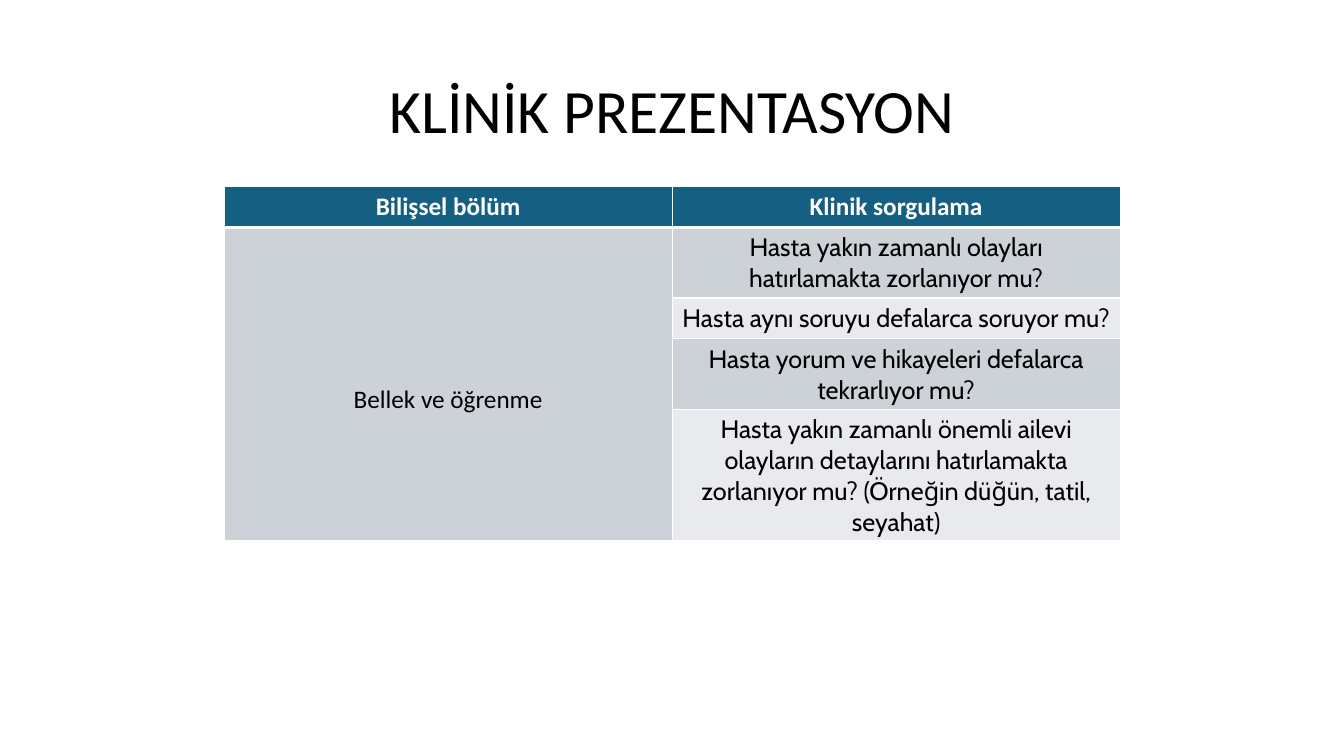
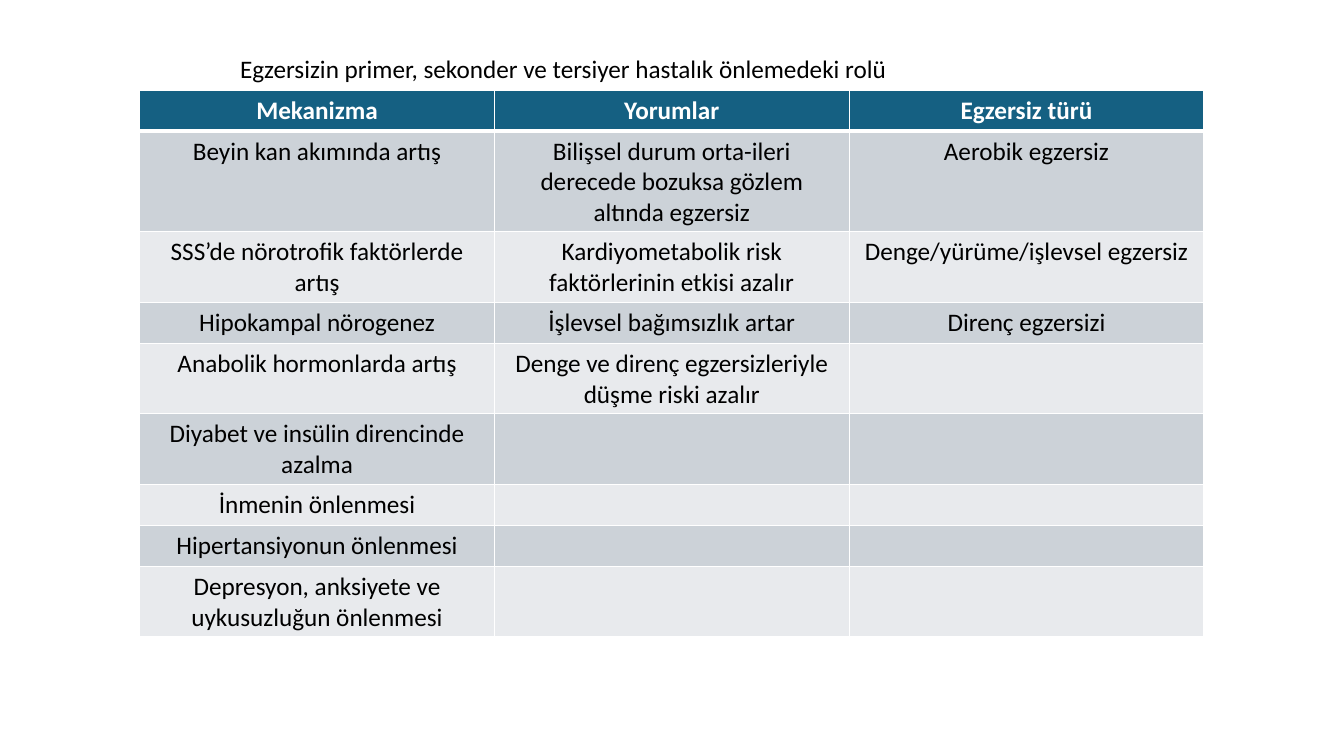
from lxml import etree
from pptx import Presentation
from pptx.dml.color import RGBColor
from pptx.enum.text import MSO_ANCHOR, PP_ALIGN
from pptx.oxml.ns import qn
from pptx.util import Cm, Pt

CENTER, LEFT = PP_ALIGN.CENTER, PP_ALIGN.LEFT
TOP, MIDDLE = MSO_ANCHOR.TOP, MSO_ANCHOR.MIDDLE

COLORS = {
    "text": "000000",
    "header": "156082",
    "header_text": "FFFFFF",
    "border": "FFFFFF",
    "band_dark": "CCD2D8",
    "band_light": "E8EAED",
}
FONT, ACCENT_FONT = "Calibri", "Cabin"
ROW_HEIGHT = 1.03
THIN, THICK = 1, 3


class Slides:
    """Shared style plus the page being filled."""

    def __init__(self):
        self.deck = Presentation()
        self.deck.slide_width, self.deck.slide_height = Cm(33.87), Cm(19.05)
        self.page = None

    def new_page(self):
        self.page = self.deck.slides.add_slide(self.deck.slide_layouts[6])

    def fill_text(self, frame, words, align=LEFT, color="text", **formats):
        para = frame.paragraphs[0]
        para.alignment = align
        span = para.add_run()
        span.text = words
        for name, value in {"name": FONT, "size": Pt(18), "bold": False, **formats}.items():
            setattr(span.font, name, value)
        span.font.color.rgb = RGBColor.from_string(COLORS[color])
        return para

    def text(self, words, left, top, width, height, anchor=TOP, **formats):
        box = self.page.shapes.add_textbox(Cm(left), Cm(top), Cm(width), Cm(height))
        frame = box.text_frame
        frame.word_wrap = True
        frame.vertical_anchor = anchor
        return self.fill_text(frame, words, **formats)

    def title(self, words):
        para = self.text(words, 2.34, 1.02, 29.21, 3.68, MIDDLE, align=CENTER, size=Pt(44))
        para.line_spacing = 0.9

    def borders(self, cell, top, bottom):
        properties = cell._tc.get_or_add_tcPr()
        sides = {"lnL": THIN, "lnR": THIN, "lnT": top, "lnB": bottom}
        for position, (side, points) in enumerate(sides.items()):
            line = etree.Element(qn(f"a:{side}"), w=str(Pt(points)))
            fill = etree.SubElement(line, qn("a:solidFill"))
            etree.SubElement(fill, qn("a:srgbClr"), val=COLORS["border"])
            properties.insert(position, line)

    def table(self, rows, left, top, column_width, body_fonts):
        """Header row, then banded rows with one font per column."""
        row_count, column_count = len(rows), len(body_fonts)
        table = self.page.shapes.add_table(
            row_count, column_count, Cm(left), Cm(top),
            Cm(column_width * column_count), Cm(ROW_HEIGHT * row_count)).table
        for column in table.columns:
            column.width = Cm(column_width)
        for i, words in enumerate(rows):
            table.rows[i].height = Cm(ROW_HEIGHT)
            fill = "header" if i == 0 else "band_dark" if i % 2 else "band_light"
            for j, font in enumerate(body_fonts):
                cell = table.cell(i, j)
                cell.fill.solid()
                cell.fill.fore_color.rgb = RGBColor.from_string(COLORS[fill])
                self.borders(cell, THICK if i == 1 else THIN, THICK if i == 0 else THIN)
                if j >= len(words) or not words[j]:
                    continue
                if i == 0:
                    self.fill_text(cell.text_frame, words[j], CENTER, "header_text", bold=True)
                else:
                    self.fill_text(cell.text_frame, words[j], CENTER, name=font)
        return table


def main():
    slides = Slides()

    # Clinical presentation
    slides.new_page()
    slides.title("KLİNİK PREZENTASYON")
    questions = [
        ("Bilişsel bölüm", "Klinik sorgulama"),
        ("Bellek ve öğrenme", "Hasta yakın zamanlı olayları hatırlamakta zorlanıyor mu?"),
        ("", "Hasta aynı soruyu defalarca soruyor mu?"),
        ("", "Hasta yorum ve hikayeleri defalarca tekrarlıyor mu?"),
        ("", "Hasta yakın zamanlı önemli ailevi olayların detaylarını hatırlamakta "
             "zorlanıyor mu? (Örneğin düğün, tatil, seyahat)"),
    ]
    table = slides.table(questions, 5.65, 4.7, 11.29, (FONT, ACCENT_FONT))
    section = table.cell(1, 0)
    section.merge(table.cell(len(questions) - 1, 0))
    section.vertical_anchor = MIDDLE
    section.margin_top = Cm(0.91)  # sits slightly below the middle

    # Role of exercise
    slides.new_page()
    slides.text("Egzersizin primer, sekonder ve tersiyer hastalık önlemedeki rolü",
                5.8, 1.22, 26.54, 1.03)
    slides.table([
        ("Mekanizma", "Yorumlar", "Egzersiz türü"),
        ("Beyin kan akımında artış",
         "Bilişsel durum orta-ileri derecede bozuksa gözlem altında egzersiz",
         "Aerobik egzersiz"),
        ("SSS’de nörotrofik faktörlerde artış",
         "Kardiyometabolik risk faktörlerinin etkisi azalır",
         "Denge/yürüme/işlevsel egzersiz"),
        ("Hipokampal nörogenez", "İşlevsel bağımsızlık artar", "Direnç egzersizi"),
        ("Anabolik hormonlarda artış", "Denge ve direnç egzersizleriyle düşme riski azalır"),
        ("Diyabet ve insülin direncinde azalma",),
        ("İnmenin önlenmesi",),
        ("Hipertansiyonun önlenmesi",),
        ("Depresyon, anksiyete ve uykusuzluğun önlenmesi",),
    ], 3.52, 2.27, 8.94, (FONT,) * 3)

    slides.deck.save("out.pptx")


if __name__ == "__main__":
    main()
